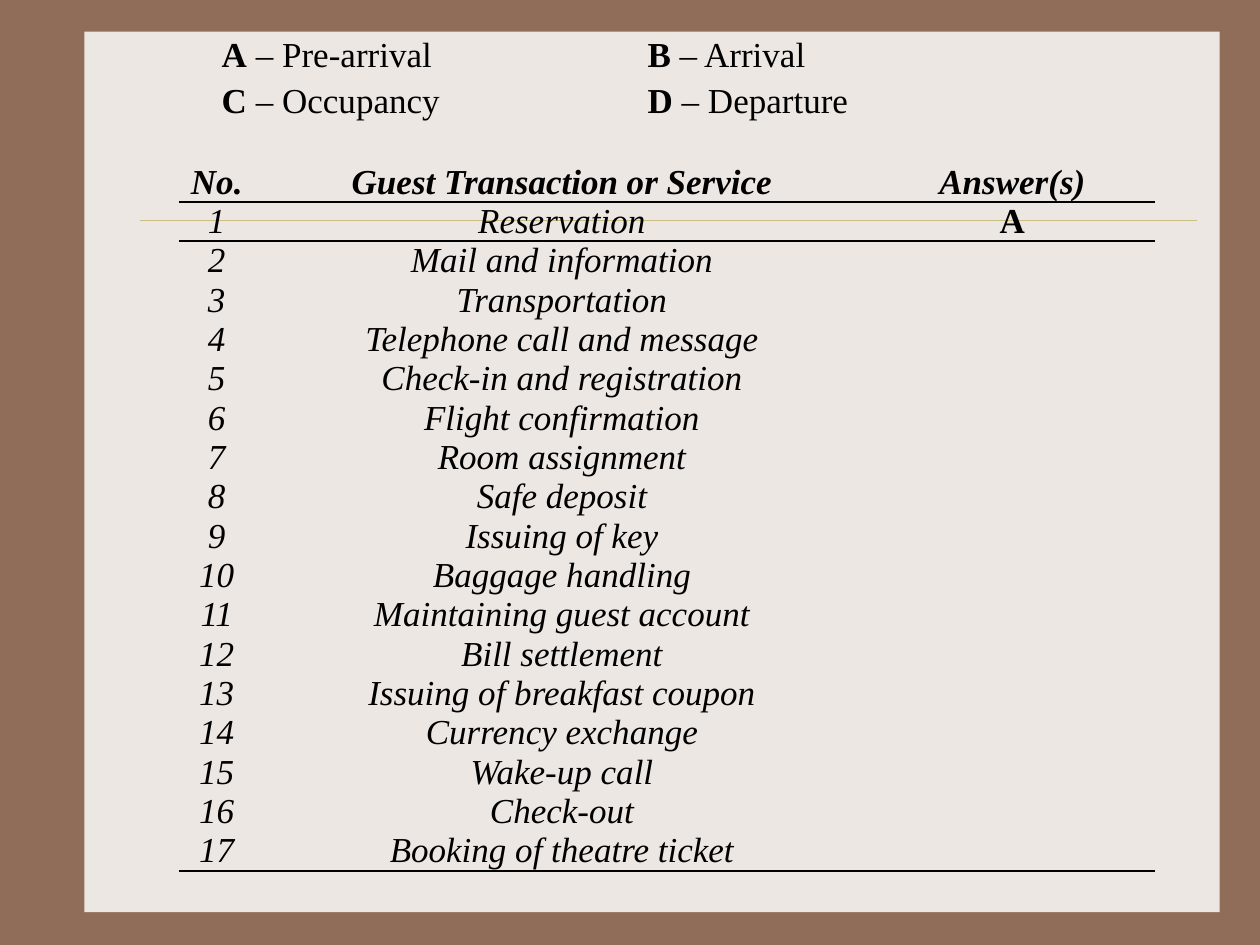
from lxml.etree import SubElement
from pptx import Presentation
from pptx.dml.color import RGBColor
from pptx.enum.shapes import MSO_CONNECTOR, MSO_SHAPE
from pptx.enum.text import MSO_ANCHOR, PP_ALIGN
from pptx.oxml import parse_xml
from pptx.oxml.ns import nsdecls, qn
from pptx.util import Inches, Pt

FONT = "Times New Roman"
BLACK = "000000"
NO_GRID_STYLE = "{2D5ABB26-0587-4C30-8999-92F81FD0307C}"

STAGES = [
    [("A", " – Pre-arrival"), ("B", " – Arrival ")],
    [("C", " – Occupancy"), ("D", " – Departure")],
]
HEADINGS = ["No.", "Guest Transaction or Service", "Answer(s)"]
SERVICES = [
    "Reservation", "Mail and information", "Transportation",
    "Telephone call and message", "Check-in and registration",
    "Flight confirmation", "Room assignment", "Safe deposit",
    "Issuing of key", "Baggage handling", "Maintaining guest account",
    "Bill settlement", "Issuing of breakfast coupon", "Currency exchange",
    "Wake-up call", "Check-out", "Booking of theatre ticket",
]
ANSWERS = {1: "A"}


def color(value):
    return RGBColor.from_string(value)


def format_run(run, bold=False, italic=False):
    run.font.name = FONT
    run.font.size = Pt(20)
    run.font.bold = bold
    run.font.italic = italic
    run.font.color.rgb = color(BLACK)


def add_plain_table(slide, left, top, columns, rows, side_margin):
    frame = slide.shapes.add_table(
        len(rows), len(columns), Inches(left), Inches(top),
        Inches(sum(columns)), Inches(sum(rows)))
    table = frame.table
    table.first_row = False
    table.horz_banding = False
    style = frame._element.find(".//" + qn("a:tableStyleId"))
    style.text = NO_GRID_STYLE
    for column, width in zip(table.columns, columns):
        column.width = Inches(width)
    for row, height in zip(table.rows, rows):
        row.height = Inches(height)
    for cell in table.iter_cells():
        cell.fill.background()
        cell.vertical_anchor = MSO_ANCHOR.MIDDLE
        cell.margin_left = cell.margin_right = Inches(side_margin)
        cell.margin_top = cell.margin_bottom = 0
    return table


def add_rule(cell, side):
    border = parse_xml(
        f'<a:{side} {nsdecls("a")} w="{Pt(1.5)}"><a:solidFill>'
        f'<a:srgbClr val="{BLACK}"/></a:solidFill></a:{side}>')
    cell._tc.get_or_add_tcPr().insert(0, border)


def add_panel(slide, left, top, width, height):
    panel = slide.shapes.add_shape(
        MSO_SHAPE.RECTANGLE, Inches(left), Inches(top), Inches(width), Inches(height))
    panel.shadow.inherit = False
    panel.fill.solid()
    panel.fill.fore_color.rgb = color("EDE7E3")
    panel.line.fill.background()
    divider_top = Inches(top + 1.5)
    divider = slide.shapes.add_connector(
        MSO_CONNECTOR.STRAIGHT, Inches(left + 0.44), divider_top,
        Inches(left + width - 0.18), divider_top)
    divider.line.color.rgb = color("CBBD83")
    divider.line.width = Pt(0.25)
    SubElement(divider._element.spPr, qn("a:effectLst"))


def add_stage_legend(slide, left, top, width):
    table = add_plain_table(slide, left, top, [width / 2] * 2, [0.39, 0.35], 0.07)
    for row, stages in enumerate(STAGES):
        for column, (letter, name) in enumerate(stages):
            paragraph = table.cell(row, column).text_frame.paragraphs[0]
            paragraph.alignment = PP_ALIGN.JUSTIFY
            paragraph.line_spacing = 1.15
            for text, bold in ((letter, True), (name, False)):
                run = paragraph.add_run()
                run.text = text
                format_run(run, bold=bold)


def add_service_table(slide, left, top, width, height):
    records = [HEADINGS] + [
        [str(number), service, ANSWERS.get(number, "")]
        for number, service in enumerate(SERVICES, 1)]
    row_height = height / len(records)
    columns = [0.6, width - 0.6 - 2.27, 2.27]
    table = add_plain_table(slide, left, top, columns, [row_height] * len(records), 0.04)
    for row, record in enumerate(records):
        for column, text in enumerate(record):
            cell = table.cell(row, column)
            if row in (0, len(records) - 1):
                add_rule(cell, "lnB")
            elif row == 1:
                add_rule(cell, "lnT")
            paragraph = cell.text_frame.paragraphs[0]
            paragraph.text = text
            paragraph.alignment = PP_ALIGN.CENTER
            is_answer = row > 0 and column == 2
            for run in paragraph.runs:
                format_run(run, bold=row == 0 or is_answer, italic=not is_answer)


def main():
    presentation = Presentation()
    presentation.slide_width = Inches(10)
    presentation.slide_height = Inches(7.5)
    slide = presentation.slides.add_slide(presentation.slide_layouts[6])
    slide.background.fill.solid()
    slide.background.fill.fore_color.rgb = color("906D58")
    add_panel(slide, 0.67, 0.25, 9.01, 6.99)
    add_service_table(slide, 1.42, 1.29, 7.75, 5.62)
    add_stage_legend(slide, 1.69, 0.22, 6.76)
    presentation.save("out.pptx")


if __name__ == "__main__":
    main()
